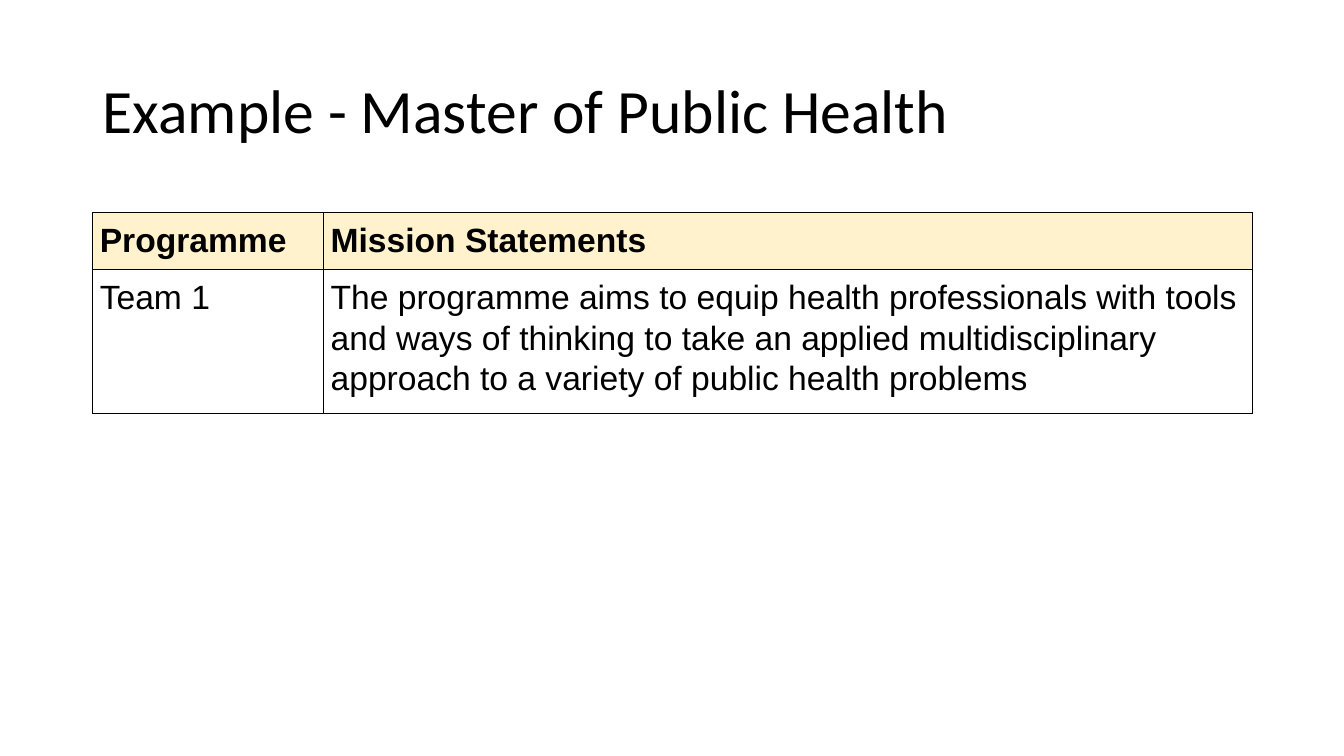
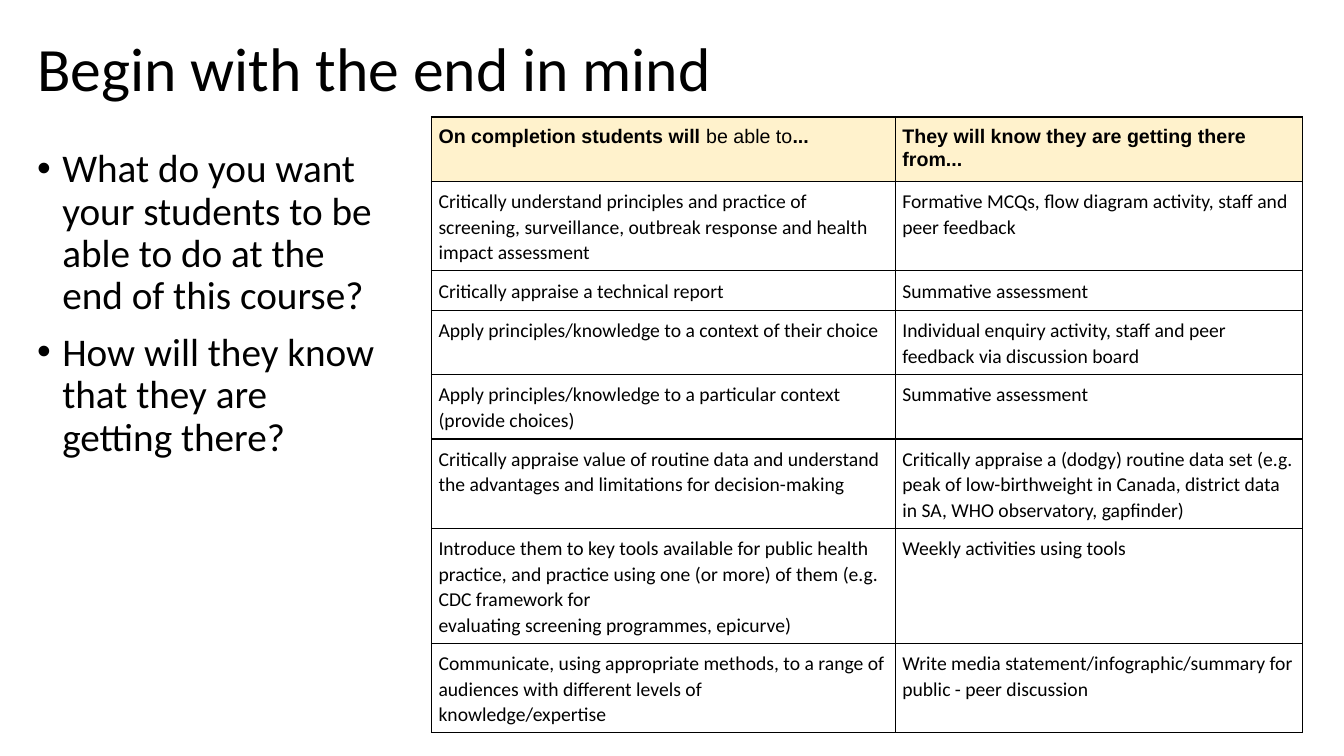
from lxml.etree import SubElement
from pptx import Presentation
from pptx.dml.color import RGBColor
from pptx.enum.text import MSO_ANCHOR
from pptx.oxml.ns import qn
from pptx.util import Inches, Pt

COLORS = {"text": "000000", "border": "000000", "header": "FFF2CC"}
TITLE_FONT = {"name": "Calibri", "size": Pt(44), "bold": False}
BULLET_FONT = {"name": "Calibri", "size": Pt(28), "bold": False}
TITLE_SIZE = (11.5, 1.45)
CELL_INSET = 0.07
BORDER_WIDTH = Pt(1)

MISSION_ROWS = [
    ("Programme", "Mission Statements"),
    ("Team 1",
     "The programme aims to equip health professionals with tools and ways of thinking "
     "to take an applied multidisciplinary approach to a variety of public health problems"),
]
QUESTIONS = [
    "What do you want your students to be able to do at the end of this course?",
    "How will they know that they are getting there?",
]
# A cell is a text with one paragraph per line, or a list of (text, bold) runs.
OUTCOME_ROWS = [
    ([("On completion students will ", True), ("be able to", False), ("...", True)],
     "They will know they are getting there from..."),
    ("Critically understand principles and practice of screening, surveillance, "
     "outbreak response and health impact assessment",
     "Formative MCQs, flow diagram activity, staff and peer feedback"),
    ("Critically appraise a technical report", "Summative assessment"),
    ("Apply principles/knowledge to a context of their choice",
     "Individual enquiry activity, staff and peer feedback via discussion board"),
    ("Apply principles/knowledge to a particular context (provide choices)",
     "Summative assessment"),
    ("Critically appraise value of routine data and understand the advantages "
     "and limitations for decision-making",
     "Critically appraise a (dodgy) routine data set (e.g. peak of low-birthweight "
     "in Canada, district data in SA, WHO observatory, gapfinder)"),
    ("Introduce them to key tools available for public health practice, and practice "
     "using one (or more) of them (e.g. CDC framework for\n"
     "evaluating screening programmes, epicurve)",
     "Weekly activities using tools"),
    ("Communicate, using appropriate methods, to a range of audiences with different "
     "levels of\nknowledge/expertise",
     "Write media statement/infographic/summary for\npublic - peer discussion"),
]


def add_run(paragraph, text, font_format):
    run = paragraph.add_run()
    run.text = text
    for name, value in font_format.items():
        setattr(run.font, name, value)
    run.font.color.rgb = RGBColor.from_string(COLORS["text"])


def next_paragraph(text_frame, index, line_spacing):
    paragraph = text_frame.add_paragraph() if index else text_frame.paragraphs[0]
    paragraph.line_spacing = line_spacing
    return paragraph


def add_text_frame(slide, left, top, width, height):
    box = slide.shapes.add_textbox(Inches(left), Inches(top), Inches(width), Inches(height))
    box.text_frame.word_wrap = True
    return box.text_frame


def add_title(slide, left, top, text):
    text_frame = add_text_frame(slide, left, top, *TITLE_SIZE)
    text_frame.vertical_anchor = MSO_ANCHOR.MIDDLE
    add_run(next_paragraph(text_frame, 0, 0.9), text, TITLE_FONT)


def add_bullets(slide, left, top, width, height, items):
    text_frame = add_text_frame(slide, left, top, width, height)
    for index, item in enumerate(items):
        paragraph = next_paragraph(text_frame, index, 0.9)
        paragraph.space_before = Pt(10)
        add_run(paragraph, item, BULLET_FONT)
        properties = paragraph._p.get_or_add_pPr()
        properties.set("marL", str(Inches(0.25)))
        properties.set("indent", str(-Inches(0.25)))
        SubElement(properties, qn("a:buFont"), typeface="Arial")
        SubElement(properties, qn("a:buChar"), char="•")


def set_borders(cell):
    """Draw all four cell borders; lines must precede the fill in the XML."""
    properties = cell._tc.get_or_add_tcPr()
    for index, side in enumerate(("lnL", "lnR", "lnT", "lnB")):
        line = SubElement(properties, qn(f"a:{side}"), w=str(BORDER_WIDTH))
        fill = SubElement(line, qn("a:solidFill"))
        SubElement(fill, qn("a:srgbClr"), val=COLORS["border"])
        properties.insert(index, line)


def fill_cell(cell, content, font_format, is_header):
    for side in ("left", "right", "top", "bottom"):
        setattr(cell, f"margin_{side}", Inches(CELL_INSET))
    if is_header:
        cell.fill.solid()
        cell.fill.fore_color.rgb = RGBColor.from_string(COLORS["header"])
    else:
        cell.fill.background()
    set_borders(cell)
    if isinstance(content, str):
        paragraphs = [[(line, is_header)] for line in content.split("\n")]
    else:
        paragraphs = [content]
    for index, runs in enumerate(paragraphs):
        paragraph = next_paragraph(cell.text_frame, index, 1.07)
        for text, bold in runs:
            add_run(paragraph, text, {**font_format, "bold": bold})


def add_grid(slide, left, top, column_widths, row_heights, rows, size, body_font):
    """Add a bordered table whose first row is a bold Arial header."""
    frame = slide.shapes.add_table(
        len(rows), len(column_widths), Inches(left), Inches(top),
        Inches(sum(column_widths)), Inches(sum(row_heights)))
    table = frame.table
    table.first_row = table.horz_banding = False
    for column, width in zip(table.columns, column_widths):
        column.width = Inches(width)
    for row_index, (row, height) in enumerate(zip(table.rows, row_heights)):
        row.height = Inches(height)
        is_header = row_index == 0
        font_format = {"name": "Arial" if is_header else body_font, "size": Pt(size)}
        for cell, content in zip(row.cells, rows[row_index]):
            fill_cell(cell, content, font_format, is_header)


def build_mission_slide(slide):
    add_title(slide, 0.92, 0.4, "Example - Master of Public Health")
    add_grid(slide, 0.92, 2.11, [2.29, 9.21], [0.53, 1.33], MISSION_ROWS, 24, "Arial")


def build_outcomes_slide(slide):
    add_title(slide, 0.27, -0.02, "Begin with the end in mind")
    add_bullets(slide, 0.27, 1.43, 3.6, 4.76, QUESTIONS)
    row_heights = [0.62, 0.85, 0.39, 0.62, 0.62, 0.85, 1.08, 0.85]
    add_grid(slide, 4.28, 1.16, [4.6, 4.04], row_heights, OUTCOME_ROWS, 14, "Calibri")


def main():
    presentation = Presentation()
    presentation.slide_width = Inches(13.33)
    presentation.slide_height = Inches(7.5)
    blank_layout = presentation.slide_layouts[6]
    for build_slide in (build_mission_slide, build_outcomes_slide):
        build_slide(presentation.slides.add_slide(blank_layout))
    presentation.save("out.pptx")


if __name__ == "__main__":
    main()
